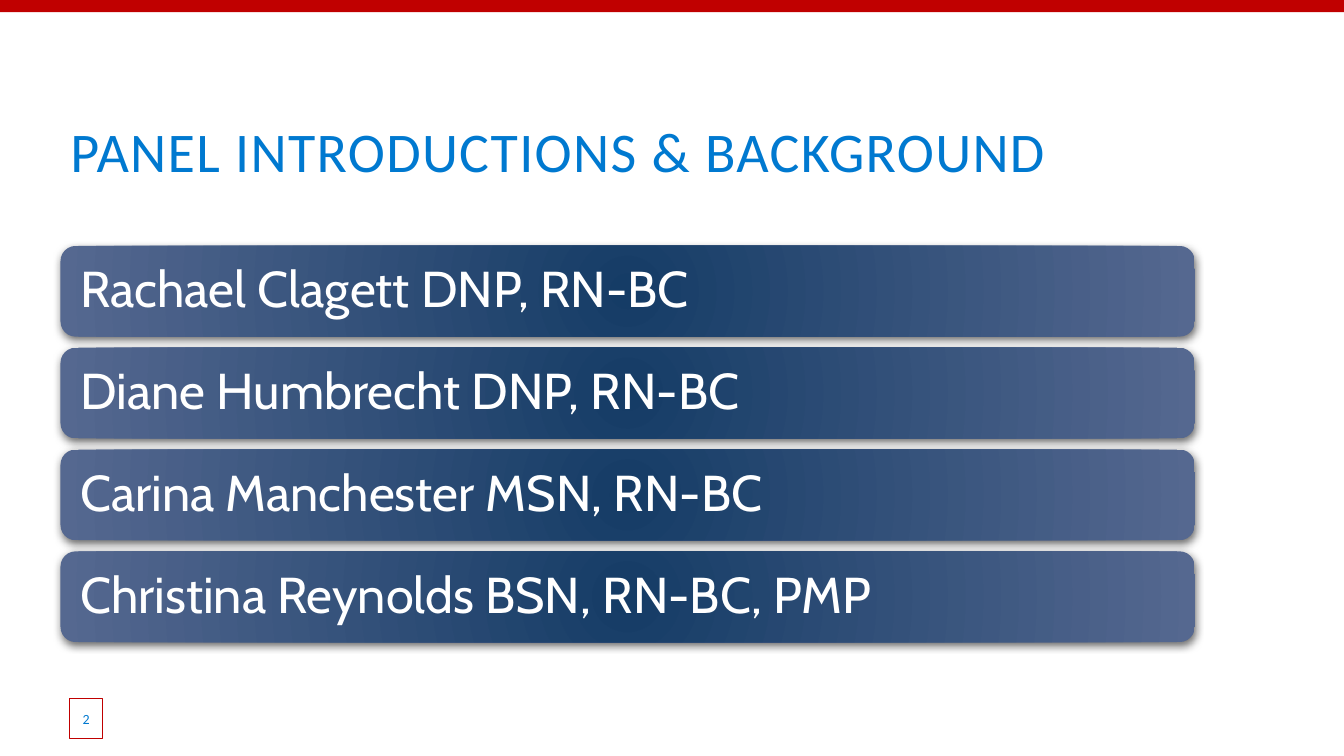
from lxml.etree import SubElement
from pptx import Presentation
from pptx.dml.color import RGBColor
from pptx.enum.shapes import MSO_SHAPE
from pptx.enum.text import MSO_ANCHOR, PP_ALIGN
from pptx.oxml import parse_xml
from pptx.oxml.ns import nsdecls, qn
from pptx.util import Inches, Pt

RED = RGBColor(0xC0, 0x00, 0x00)
BLUE = RGBColor(0x00, 0x79, 0xD0)
WHITE = RGBColor(0xFF, 0xFF, 0xFF)
NAVY = RGBColor(0x15, 0x3C, 0x66)
SLATE = RGBColor(0x55, 0x68, 0x90)
BLACK = RGBColor(0x00, 0x00, 0x00)

PANELISTS = [
    "Rachael Clagett DNP, RN-BC",
    "Diane Humbrecht DNP, RN-BC",
    "Carina Manchester MSN, RN-BC",
    "Christina Reynolds BSN, RN-BC, PMP",
]


def write_text(shape, text, *, size, font, color, align=PP_ALIGN.LEFT,
               anchor=MSO_ANCHOR.MIDDLE, insets=(0.1, 0.05), line_spacing=None,
               space_after=0, tracking=None):
    frame = shape.text_frame
    frame.word_wrap = True
    frame.vertical_anchor = anchor
    frame.margin_left = frame.margin_right = Inches(insets[0])
    frame.margin_top = frame.margin_bottom = Inches(insets[1])
    para = frame.paragraphs[0]
    para.alignment = align
    para.line_spacing = line_spacing
    para.space_after = Pt(space_after)
    span = para.add_run()
    span.text = text
    span.font.size = Pt(size)
    span.font.name = font
    span.font.color.rgb = color
    if tracking:
        span.font._element.set("spc", str(int(tracking * 100)))


def add_box(page, kind, left, top, width, height):
    box = page.shapes.add_shape(kind, Inches(left), Inches(top),
                                Inches(width), Inches(height))
    box.shadow.inherit = False
    box.line.fill.background()
    return box


def add_top_band(page, left, top, width, height):
    band = add_box(page, MSO_SHAPE.RECTANGLE, left, top, width, height)
    band.fill.solid()
    band.fill.fore_color.rgb = RED


def add_title(page, left, top, width, height):
    title = page.shapes.add_textbox(Inches(left), Inches(top),
                                    Inches(width), Inches(height))
    write_text(title, "PANEL INTRODUCTIONS & BACKGROUND", size=40, font="Calibri",
               color=BLUE, anchor=MSO_ANCHOR.TOP, insets=(0.1, 0.08), tracking=1)


def style_card(card):
    # Radial gradient, dark in the middle
    properties = card._element.spPr
    gradient = parse_xml(
        f'<a:gradFill {nsdecls("a")} rotWithShape="1"><a:gsLst>'
        f'<a:gs pos="0"><a:srgbClr val="{NAVY}"/></a:gs>'
        f'<a:gs pos="100000"><a:srgbClr val="{SLATE}"/></a:gs></a:gsLst>'
        '<a:path path="circle"><a:fillToRect l="100000" t="100000" '
        'r="100000" b="100000"/></a:path></a:gradFill>')
    properties.find(qn("a:prstGeom")).addnext(gradient)
    # Soft shadow just below the card
    shadow = SubElement(properties.find(qn("a:effectLst")), qn("a:outerShdw"),
                        blurRad=str(Pt(6)), dist=str(Pt(2)), dir="5400000",
                        algn="ctr", rotWithShape="0")
    tint = SubElement(shadow, qn("a:srgbClr"), val=str(BLACK))
    SubElement(tint, qn("a:alpha"), val="60000")


def add_panelists(page, left, top, width, height, gap=0.11):
    card_height = (height - gap * (len(PANELISTS) - 1)) / len(PANELISTS)
    for index, name in enumerate(PANELISTS):
        card = add_box(page, MSO_SHAPE.ROUNDED_RECTANGLE, left,
                       top + index * (card_height + gap), width, card_height)
        style_card(card)
        write_text(card, name, size=36, font="Cabin", color=WHITE,
                   insets=(0.15, 0.15), line_spacing=0.9)


def add_page_number(page, left, top, width, height):
    box = add_box(page, MSO_SHAPE.RECTANGLE, left, top, width, height)
    box.fill.solid()
    box.fill.fore_color.rgb = WHITE
    tint = box._element.spPr.find(qn("a:solidFill")).find(qn("a:srgbClr"))
    SubElement(tint, qn("a:alpha"), val="82000")
    box.line.color.rgb = RED
    box.line.width = Pt(0.75)
    write_text(box, "2", size=10, font="Calibri", color=BLUE,
               align=PP_ALIGN.CENTER, insets=(0, 0.05), space_after=6)


def main():
    deck = Presentation()
    deck.slide_width, deck.slide_height = Inches(13.33), Inches(7.5)
    page = deck.slides.add_slide(deck.slide_layouts[6])
    add_top_band(page, 0, 0, 13.33, 0.12)
    add_title(page, 0.6, 1.08, 11.82, 1)
    add_page_number(page, 0.69, 6.93, 0.33, 0.4)
    add_panelists(page, 0.6, 2.44, 11.25, 3.93)
    deck.save("out.pptx")


if __name__ == "__main__":
    main()
